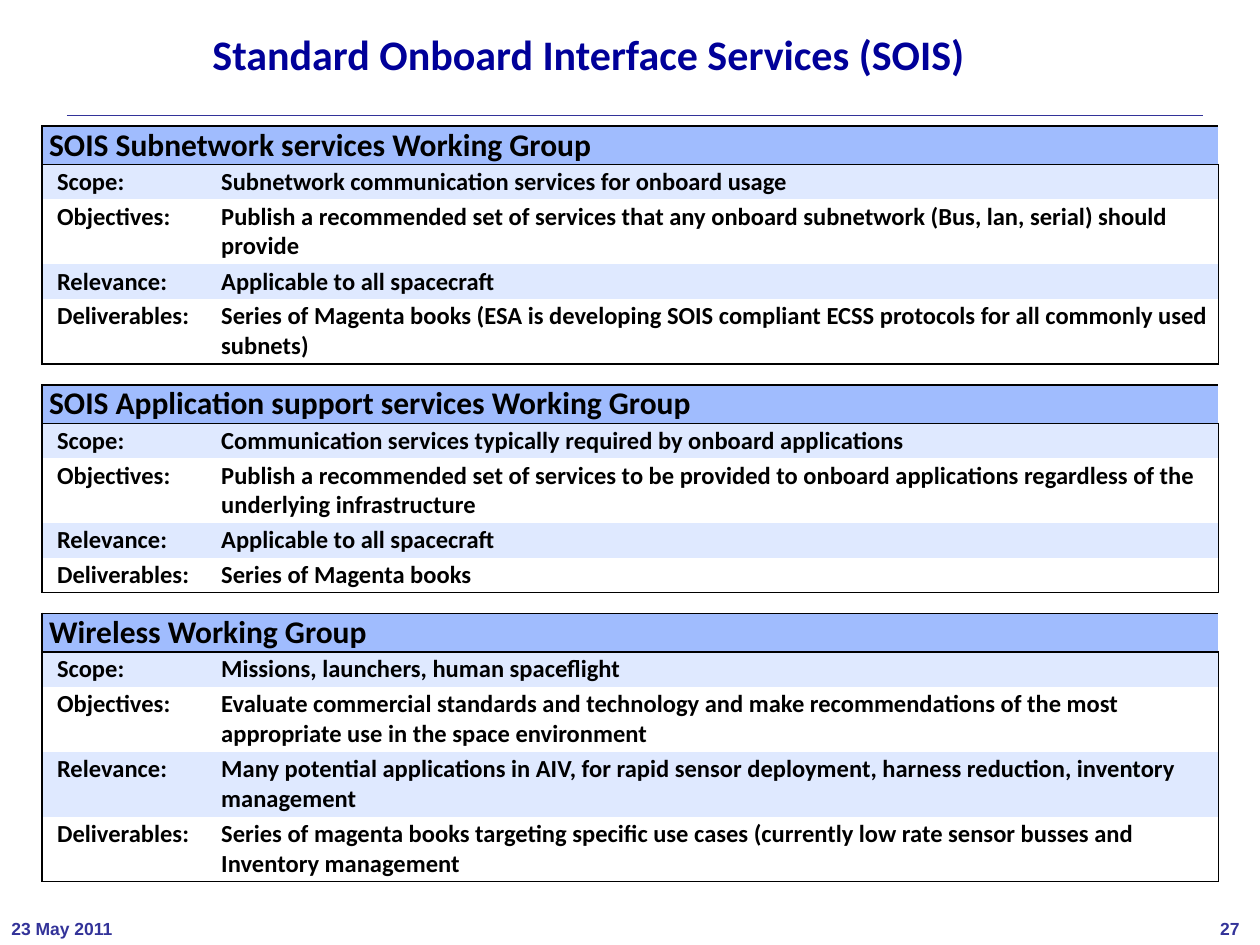
from lxml.etree import SubElement
from pptx import Presentation
from pptx.dml.color import RGBColor
from pptx.enum.shapes import MSO_CONNECTOR as Connector
from pptx.enum.text import MSO_ANCHOR as Anchor, MSO_AUTO_SIZE as AutoSize, PP_ALIGN as Align
from pptx.oxml.ns import qn
from pptx.util import Cm, Pt

BLACK = RGBColor(0x00, 0x00, 0x00)
NAVY = RGBColor(0x00, 0x00, 0x99)
INDIGO = RGBColor(0x33, 0x33, 0x99)
HEADER_BLUE = RGBColor(0xA0, 0xBC, 0xFE)
BAND_BLUE = RGBColor(0xDF, 0xE9, 0xFF)

TITLE = "Standard Onboard Interface Services (SOIS)"
DATE, PAGE = "23 May 2011", "27"
LABELS = ("Scope:", "Objectives:", "Relevance:", "Deliverables:")
GROUPS = [
    ("SOIS Subnetwork services Working Group", (
        "Subnetwork communication services for onboard usage",
        "Publish a recommended set of services that any onboard subnetwork (Bus, lan, serial) should provide",
        "Applicable to all spacecraft",
        "Series of Magenta books (ESA is developing SOIS compliant ECSS protocols for all commonly used subnets)",
    )),
    ("SOIS Application support services Working Group", (
        "Communication services typically required by onboard applications",
        "Publish a recommended set of services to be provided to onboard applications regardless of the "
        "underlying infrastructure",
        "Applicable to all spacecraft",
        "Series of Magenta books",
    )),
    ("Wireless Working Group", (
        "Missions, launchers, human spaceflight",
        "Evaluate commercial standards and technology and make recommendations of the most appropriate use "
        "in the space environment",
        "Many potential applications in AIV, for rapid sensor deployment, harness reduction, inventory management",
        "Series of magenta books targeting specific use cases (currently low rate sensor busses and "
        "Inventory management",
    )),
]
COLUMNS = (3.61, 20.1)
HEADER_H, LINE_H, GAP_H = 0.78, 0.7, 0.42
WRAPPED_H = 1.31
LINE_CHARS = 96


def add_text(paragraph, text, size, color, font="Calibri"):
    """Add one bold run to a paragraph."""
    run = paragraph.add_run()
    run.text = text
    run.font.name, run.font.size, run.font.bold = font, Pt(size), True
    run.font.color.rgb = color


def set_borders(cell, sides):
    """Draw black lines on the given sides and clear the others."""
    properties = cell._tc.get_or_add_tcPr()
    for side in "LRTB":
        line = SubElement(properties, qn("a:ln" + side), w=str(Pt(1)))
        if side in sides:
            fill = SubElement(line, qn("a:solidFill"))
            SubElement(fill, qn("a:srgbClr"), val=str(BLACK))
        else:
            SubElement(line, qn("a:noFill"))


def style_cell(cell, sides, color=None, left=0, vertical=0):
    """Set the borders, fill and margins of a cell."""
    set_borders(cell, sides)
    if color is None:
        cell.fill.background()
    else:
        cell.fill.solid()
        cell.fill.fore_color.rgb = color
    cell.margin_left, cell.margin_right = Cm(left), Cm(0)
    cell.margin_top = cell.margin_bottom = Cm(vertical)


def fill_wide_row(row, heading):
    """Fill a merged heading row, or a thin gap row when heading is None."""
    first, last = row.cells
    color = HEADER_BLUE if heading else None
    style_cell(first, "LTB" if heading else "TB", color, 0.14)
    style_cell(last, "RTB" if heading else "TB", color)
    first.merge(last)
    paragraph = first.text_frame.paragraphs[0]
    if heading:
        add_text(paragraph, heading, 18, BLACK)
    else:
        SubElement(paragraph._p, qn("a:endParaRPr"), sz="800")
    row.height = Cm(HEADER_H if heading else GAP_H)


def fill_detail_row(row, index, label, detail):
    """Fill a label and its description."""
    ends = {0: "T", len(LABELS) - 1: "B"}.get(index, "")
    color = None if index % 2 else BAND_BLUE
    for cell, text, side, left in zip(row.cells, (label, detail), "LR", (0.3, 0)):
        style_cell(cell, side + ends, color, left, 0.05)
        add_text(cell.text_frame.paragraphs[0], text, 14, BLACK)
    row.height = Cm(WRAPPED_H if len(detail) > LINE_CHARS else LINE_H)


def add_footer(slide, text, left, width, align):
    """Add a small footer text."""
    frame = slide.shapes.add_textbox(Cm(left), Cm(18.39), Cm(width), Cm(0.66)).text_frame
    frame.word_wrap = False
    frame.auto_size = AutoSize.SHAPE_TO_FIT_TEXT
    frame.margin_left = frame.margin_right = Cm(0.23)
    frame.margin_top = frame.margin_bottom = Cm(0.11)
    frame.paragraphs[0].alignment = align
    add_text(frame.paragraphs[0], text, 10, INDIGO, "Arial")


def main():
    """Build the working group slide."""
    deck = Presentation()
    deck.slide_width, deck.slide_height = Cm(25.4), Cm(19.05)
    slide = deck.slides.add_slide(deck.slide_layouts[5])

    rule = slide.shapes.add_connector(Connector.STRAIGHT, Cm(1.35), Cm(2.33), Cm(24.26), Cm(2.33))
    rule.line.color.rgb, rule.line.width = INDIGO, Pt(0.13)
    SubElement(rule._element.spPr, qn("a:effectLst"))
    add_footer(slide, PAGE, 24.33, 0.89, Align.RIGHT)
    add_footer(slide, DATE, 0, 2.51, Align.LEFT)

    title = slide.shapes.title
    title.left, title.top, title.width, title.height = Cm(3.61), Cm(0.56), Cm(16.51), Cm(1.35)
    title.text_frame.vertical_anchor = Anchor.TOP
    heading = title.text_frame.paragraphs[0]
    heading.alignment, heading.line_spacing = Align.CENTER, 0.9
    add_text(heading, TITLE, 24, NAVY)

    row_count = len(GROUPS) * (len(LABELS) + 2) - 1
    table = slide.shapes.add_table(
        row_count, len(COLUMNS), Cm(0.85), Cm(2.54), Cm(sum(COLUMNS)), Cm(15.2)).table
    table.first_row = table.horz_banding = False
    for column, width in zip(table.columns, COLUMNS):
        column.width = Cm(width)
    rows = iter(table.rows)
    for number, (name, details) in enumerate(GROUPS):
        if number:
            fill_wide_row(next(rows), None)
        fill_wide_row(next(rows), name)
        for index, (label, detail) in enumerate(zip(LABELS, details)):
            fill_detail_row(next(rows), index, label, detail)

    deck.save("out.pptx")


if __name__ == "__main__":
    main()
